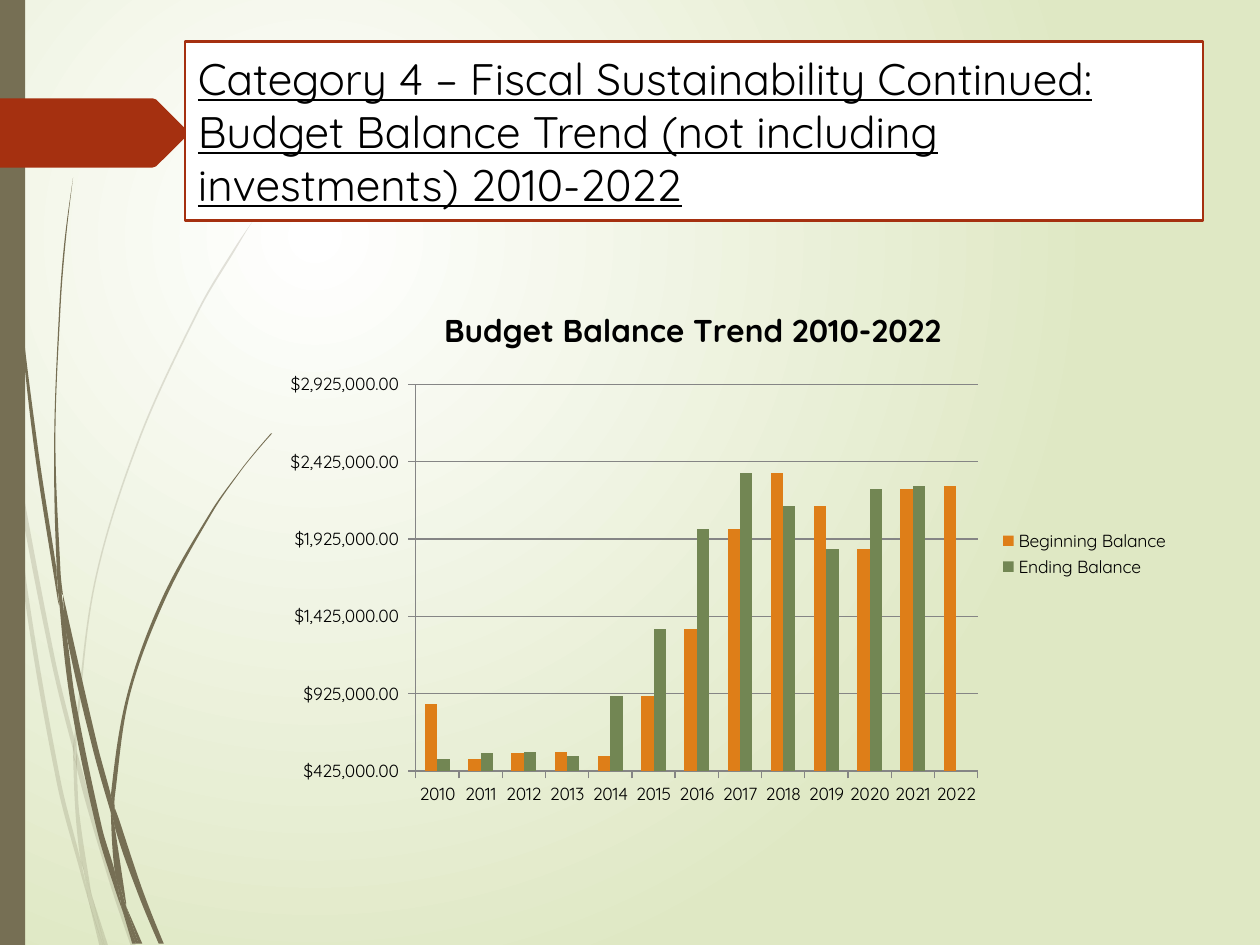
from dataclasses import dataclass

from lxml import etree
from pptx import Presentation
from pptx import util as u
from pptx.chart import data as cd
from pptx.dml import color as dc
from pptx.enum import chart as ch, shapes as sh, text as tx
from pptx.oxml import ns

PX = 9144  # EMU per px, 100 px to the inch
FONT = "Quicksand"
COLORS = {
    "white": "FFFFFF", "black": "000000", "lime": "DFE8C4", "olive": "766F54",
    "red": "A53010", "gray": "858585", "orange": "DE7E18", "green": "728653",
}
CHART_BOX = (217, 233, 721, 413)
FLAG = [(0, 78), (121, 78), (124, 79), (149, 104), (149, 107), (124, 132), (121, 133), (0, 133)]
YEARS = [str(year) for year in range(2010, 2023)]
FUNDS = [860000, 500000, 540000, 550000, 520000, 910000, 1340000, 1990000,
         2350000, 2140000, 1860000, 2250000, 2270000]

Points = list[tuple[int, int]]


@dataclass
class Blade:
    """A piece of grass between two edges, each listed from top to bottom."""
    left: Points
    right: Points


FAINT = [
    Blade([(0, 299), (7, 344), (8, 350)], [(0, 282), (6, 322), (8, 350)]),
    Blade([(10, 345), (12, 376), (40, 522), (59, 599)], [(10, 345), (43, 520), (59, 586)]),
    Blade([(61, 596), (61, 610), (85, 694), (104, 751)],
          [(61, 596), (64, 607), (88, 692), (108, 751)]),
    Blade([(73, 711), (83, 751)], [(73, 711), (86, 751)]),
    Blade([(8, 350), (19, 470), (45, 621), (64, 693), (70, 714)],
          [(8, 350), (12, 376), (22, 469), (48, 619), (64, 683), (69, 707), (70, 714)]),
    Blade([(58, 599), (60, 646), (64, 683), (67, 692), (73, 711)],
          [(58, 599), (61, 608), (61, 610), (63, 646), (72, 706), (73, 711)]),
    Blade([(217, 153), (201, 175), (186, 197), (158, 244), (110, 348), (75, 461),
           (59, 584), (59, 586)],
          [(217, 154), (201, 175), (187, 198), (159, 245), (111, 349), (76, 462),
           (61, 584), (61, 596)]),
    Blade([(70, 714), (79, 751)], [(70, 714), (82, 751)]),
    Blade([(59, 586), (58, 599), (61, 608), (61, 610)], [(59, 586), (61, 596), (61, 610)]),
    Blade([(65, 683), (69, 707), (70, 714), (82, 751)],
          [(65, 683), (67, 692), (73, 711), (83, 751)]),
]
DARK = [
    Blade([(2, 0), (3, 48), (5, 110), (14, 233), (27, 355), (46, 477), (47, 481)],
          [(3, 0), (4, 48), (6, 109), (15, 232), (30, 355), (45, 453), (45, 457), (47, 481)]),
    Blade([(50, 472), (53, 505), (73, 592), (88, 645)],
          [(50, 472), (77, 590), (88, 631), (88, 633)]),
    Blade([(91, 641), (91, 656), (109, 708), (126, 749)],
          [(91, 641), (94, 649), (113, 706), (130, 749)]),
    Blade([(47, 477), (56, 557), (77, 659), (92, 708), (97, 722)],
          [(47, 477), (53, 505), (60, 556), (81, 657), (91, 691), (96, 717), (97, 722)]),
    Blade([(58, 141), (51, 193), (47, 245), (43, 349), (45, 449), (49, 472)],
          [(58, 141), (52, 193), (48, 245), (44, 349), (48, 453), (50, 472)]),
    Blade([(100, 719), (110, 749)], [(100, 719), (113, 749)]),
    Blade([(45, 449), (45, 453), (47, 477), (53, 505)], [(45, 449), (49, 472), (53, 505)]),
    Blade([(215, 344), (203, 358), (191, 373), (168, 405), (129, 474), (101, 551), (88, 631)],
          [(216, 344), (203, 359), (191, 374), (169, 406), (131, 476), (103, 552),
           (91, 633), (91, 641)]),
    Blade([(97, 722), (105, 749)], [(97, 722), (108, 749)]),
    Blade([(88, 645), (91, 691), (96, 706), (100, 719)],
          [(88, 645), (90, 651), (91, 656), (100, 716), (100, 719)]),
    Blade([(88, 631), (88, 645), (90, 651), (91, 656)], [(88, 631), (91, 641), (91, 656)]),
    Blade([(91, 691), (96, 717), (97, 722), (108, 749)],
          [(91, 691), (96, 706), (100, 719), (110, 749)]),
]


def rgb(name: str) -> dc.RGBColor:
    return dc.RGBColor.from_string(COLORS[name])


def paint(shape, name: str, alpha: int = 100) -> None:
    shape.shadow.inherit = False
    shape.fill.solid()
    shape.fill.fore_color.rgb = rgb(name)
    shape.line.fill.background()
    if alpha < 100:
        tint = shape._element.spPr.find(".//" + ns.qn("a:srgbClr"))
        etree.SubElement(tint, ns.qn("a:alpha"), val=str(alpha * 1000))


def style(font, size: float, bold: bool = False) -> None:
    font.name, font.size, font.bold = FONT, u.Pt(size), bold
    font.color.rgb = rgb("black")


def handles(knots: Points) -> list[Points]:
    """Bézier handles and end of each curve that joins the knots, x over y."""
    pairs = list(zip(knots, knots[1:]))
    rates = [(b[0] - a[0]) / (b[1] - a[1]) for a, b in pairs]
    inner = [(c[0] - a[0]) / (c[1] - a[1]) for a, c in zip(knots, knots[2:])]
    near = inner or rates
    slopes = [1.5 * rates[0] - 0.5 * near[0], *inner, 1.5 * rates[-1] - 0.5 * near[-1]]
    curves = []
    for (a, b), m, n in zip(pairs, slopes, slopes[1:]):
        third = (b[1] - a[1]) / 3
        curves.append([(a[0] + m * third, a[1] + third), (b[0] - n * third, b[1] - third), b])
    return curves


def outline(slide, spots: Points):
    pen = slide.shapes.build_freeform(*(v * PX for v in spots[0]), scale=1.0)
    pen.add_line_segments([(x * PX, y * PX) for x, y in spots[1:]], close=True)
    return pen.convert_to_shape()


def draw_blade(slide, blade: Blade, alpha: int) -> None:
    shape = outline(slide, blade.left + blade.right[::-1])
    sides = shape._element.spPr.findall(".//" + ns.qn("a:lnTo"))
    down = handles(blade.left)
    rise = handles([(x, -y) for x, y in blade.right[::-1]])
    up = [[(x, -y) for x, y in curve] for curve in rise]
    for side, curve in zip(sides, down + [None] + up):
        if curve is None:  # straight link between the edges
            continue
        bend = etree.Element(ns.qn("a:cubicBezTo"))
        for x, y in curve:
            etree.SubElement(bend, ns.qn("a:pt"), x=str(round(x * PX) - shape.left),
                             y=str(round(y * PX) - shape.top))
        side.getparent().replace(side, bend)
    paint(shape, "olive", alpha)


def draw_ground(slide) -> None:
    fill = slide.background.fill
    fill.gradient()
    for stop, name in zip(fill.gradient_stops, ("white", "lime")):
        stop.color.rgb = rgb(name)
    line = slide._element.find(".//" + ns.qn("a:lin"))
    glow = etree.Element(ns.qn("a:path"), path="circle")
    etree.SubElement(glow, ns.qn("a:fillToRect"), l="50000", t="50000", r="100000", b="100000")
    line.getparent().replace(line, glow)


def draw_title(slide) -> None:
    title = slide.shapes.title
    slide.shapes._spTree.append(title._element)  # in front of the grass
    title.left, title.top, title.width, title.height = (v * PX for v in (147, 33, 808, 142))
    title.fill.solid()
    title.fill.fore_color.rgb = rgb("white")
    title.line.color.rgb = rgb("red")
    title.line.width = u.Pt(1.25)
    frame = title.text_frame
    frame.text = ("Category 4 – Fiscal Sustainability Continued:\v"
                  "Budget Balance Trend (not including investments) 2010-2022")
    frame.word_wrap = True
    frame.auto_size = tx.MSO_AUTO_SIZE.NONE
    frame.vertical_anchor = tx.MSO_ANCHOR.MIDDLE
    para = frame.paragraphs[0]
    para.alignment = tx.PP_ALIGN.LEFT
    for run in para.runs:
        style(run.font, 25.2)
        run.font.underline = True


def place(part, index: int, **spots: int) -> None:
    """Fix a chart part at a place in px from the chart's corner."""
    for old in part.findall(ns.qn("c:layout")):
        part.remove(old)
    layout = etree.Element(ns.qn("c:layout"))
    manual = etree.SubElement(layout, ns.qn("c:manualLayout"))
    if "w" in spots:
        etree.SubElement(manual, ns.qn("c:layoutTarget"), val="inner")
    for key in ("xMode", "yMode"):
        etree.SubElement(manual, ns.qn("c:" + key), val="edge")
    for key, span in spots.items():
        whole = CHART_BOX[2] if key in "xw" else CHART_BOX[3]
        etree.SubElement(manual, ns.qn("c:" + key), val=str(span / whole))
    part.insert(index, layout)


def draw_chart(slide) -> None:
    data = cd.CategoryChartData()
    data.categories = YEARS
    data.add_series("Beginning Balance", FUNDS)
    data.add_series("Ending Balance", FUNDS[1:] + [None])
    chart = slide.shapes.add_chart(
        ch.XL_CHART_TYPE.COLUMN_CLUSTERED, *(v * PX for v in CHART_BOX), data).chart
    style(chart.font, 10)

    chart.has_title = True
    para = chart.chart_title.text_frame.paragraphs[0]
    para.text = "Budget Balance Trend 2010-2022"
    style(para.runs[0].font, 18, bold=True)
    place(chart.chart_title._element, 1, x=131, y=6)
    place(chart._chartSpace.chart.plotArea, 0, x=113, y=72, w=446, h=307)

    plot = chart.plots[0]
    plot.gap_width, plot.overlap, plot.vary_by_categories = 150, 0, False
    for row, name in zip(plot.series, ("orange", "green")):
        row.format.fill.solid()
        row.format.fill.fore_color.rgb = rgb(name)

    years, funds = chart.category_axis, chart.value_axis
    funds.minimum_scale, funds.maximum_scale = 425000, 2925000
    funds.major_unit = 500000
    funds.has_major_gridlines = True
    funds.tick_labels.number_format = '"$"#,##0.00_);[Red]\\("$"#,##0.00\\)'
    funds.tick_labels.number_format_is_linked = False
    for axis in (years, funds):
        axis.major_tick_mark = ch.XL_TICK_MARK.OUTSIDE
        style(axis.tick_labels.font, 10)
    for part in (years, funds, funds.major_gridlines):
        part.format.line.color.rgb = rgb("gray")
        part.format.line.width = u.Pt(0.75)

    chart.has_legend = True
    chart.legend.position = ch.XL_LEGEND_POSITION.RIGHT
    chart.legend.include_in_layout = False
    style(chart.legend.font, 10)


def main() -> None:
    deck = Presentation()
    deck.slide_width, deck.slide_height = 1000 * PX, 750 * PX
    slide = deck.slides.add_slide(deck.slide_layouts[5])
    draw_ground(slide)
    for blades, alpha in ((FAINT, 20), (DARK, 100)):
        for blade in blades:
            draw_blade(slide, blade, alpha)
    strip = slide.shapes.add_shape(sh.MSO_SHAPE.RECTANGLE, 0, 0, 20 * PX, 750 * PX)
    paint(strip, "olive")
    paint(outline(slide, FLAG), "red")
    draw_title(slide)
    draw_chart(slide)
    deck.save("out.pptx")


if __name__ == "__main__":
    main()
